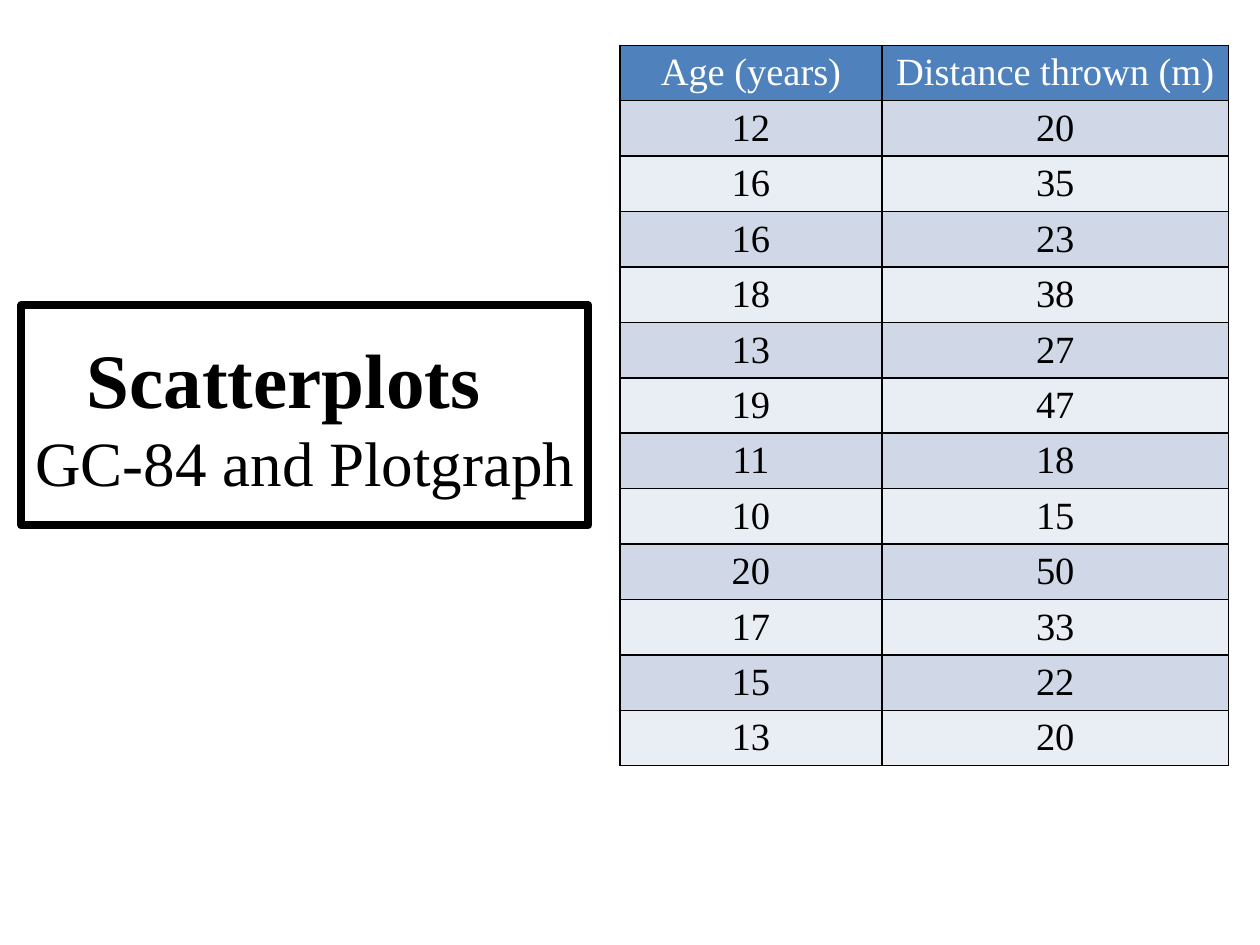
from lxml import etree
from pptx import Presentation
from pptx.dml.color import RGBColor
from pptx.enum.shapes import MSO_SHAPE
from pptx.enum.text import MSO_ANCHOR, PP_ALIGN
from pptx.oxml.ns import qn
from pptx.util import Inches, Pt

RECTANGLE = MSO_SHAPE.RECTANGLE
MIDDLE = MSO_ANCHOR.MIDDLE
CENTER = PP_ALIGN.CENTER
LEFT = PP_ALIGN.LEFT
BLACK = RGBColor(0x00, 0x00, 0x00)
WHITE = RGBColor(0xFF, 0xFF, 0xFF)
HEADER_BLUE = RGBColor(0x4F, 0x81, 0xBD)
BANDS = (RGBColor(0xE9, 0xED, 0xF4), RGBColor(0xD0, 0xD8, 0xE8))
BORDER_SIDES = ("a:lnL", "a:lnR", "a:lnT", "a:lnB")

HEADINGS = ("Age (years)", "Distance thrown (m)")
THROWS = (
    (12, 20), (16, 35), (16, 23), (18, 38), (13, 27), (19, 47),
    (11, 18), (10, 15), (20, 50), (17, 33), (15, 22), (13, 20),
)


class SlideBuilder:
    """Holds the text style and the current slide, and adds elements to it."""

    font_name = "Times New Roman"

    def __init__(self, slide):
        self.slide = slide

    def add_run(self, paragraph, text, size, color=BLACK, bold=False, alignment=CENTER):
        paragraph.alignment = alignment
        run = paragraph.add_run()
        run.text = text
        run.font.name = self.font_name
        run.font.size = Pt(size)
        run.font.bold = bold
        run.font.color.rgb = color

    def add_title_box(self, left, top, width, height, title, subtitle, title_indent):
        shape = self.slide.shapes.add_shape(
            RECTANGLE, Inches(left), Inches(top), Inches(width), Inches(height))
        shape.shadow.inherit = False
        shape.fill.background()
        shape.line.color.rgb = BLACK
        shape.line.width = Pt(4.5)
        etree.SubElement(shape.line._get_or_add_ln(), qn("a:round"))
        frame = shape.text_frame
        frame.word_wrap = True
        frame.vertical_anchor = MIDDLE
        frame.margin_left = frame.margin_right = Inches(0.05)
        heading, subheading = frame.paragraphs[0], frame.add_paragraph()
        for paragraph, indent in ((heading, title_indent), (subheading, 0)):
            paragraph._p.get_or_add_pPr().set("marL", str(Inches(indent)))
        self.add_run(heading, title, 44, bold=True, alignment=LEFT)
        self.add_run(subheading, subtitle, 36)

    def add_border(self, cell):
        properties = cell._tc.get_or_add_tcPr()
        for index, side in enumerate(BORDER_SIDES):
            line = etree.Element(qn(side), w=str(Pt(1)))
            fill = etree.SubElement(line, qn("a:solidFill"))
            etree.SubElement(fill, qn("a:srgbClr"), val=str(BLACK))
            properties.insert(index, line)

    def add_table(self, left, top, column_widths, row_height, rows):
        table = self.slide.shapes.add_table(
            len(rows), len(column_widths), Inches(left), Inches(top),
            Inches(sum(column_widths)), Inches(row_height * len(rows))).table
        for column, width in zip(table.columns, column_widths):
            column.width = Inches(width)
        for row_index, values in enumerate(rows):
            table.rows[row_index].height = Inches(row_height)
            is_header = row_index == 0
            for column_index, value in enumerate(values):
                cell = table.cell(row_index, column_index)
                cell.fill.solid()
                cell.fill.fore_color.rgb = HEADER_BLUE if is_header else BANDS[row_index % 2]
                cell.vertical_anchor = MIDDLE
                cell.margin_top = cell.margin_bottom = Inches(0.04)
                self.add_border(cell)
                self.add_run(cell.text_frame.paragraphs[0], str(value), 22,
                             WHITE if is_header else BLACK)


def main():
    presentation = Presentation()
    presentation.slide_width = Inches(10)
    presentation.slide_height = Inches(7.5)
    slide = presentation.slides.add_slide(presentation.slide_layouts[6])
    builder = SlideBuilder(slide)
    builder.add_title_box(0.17, 2.42, 4.5, 1.75, "Scatterplots", "GC-84 and Plotgraph", 0.47)
    builder.add_table(4.92, 0.36, (2.08, 2.75), 0.44, (HEADINGS,) + THROWS)
    presentation.save("out.pptx")


if __name__ == "__main__":
    main()
